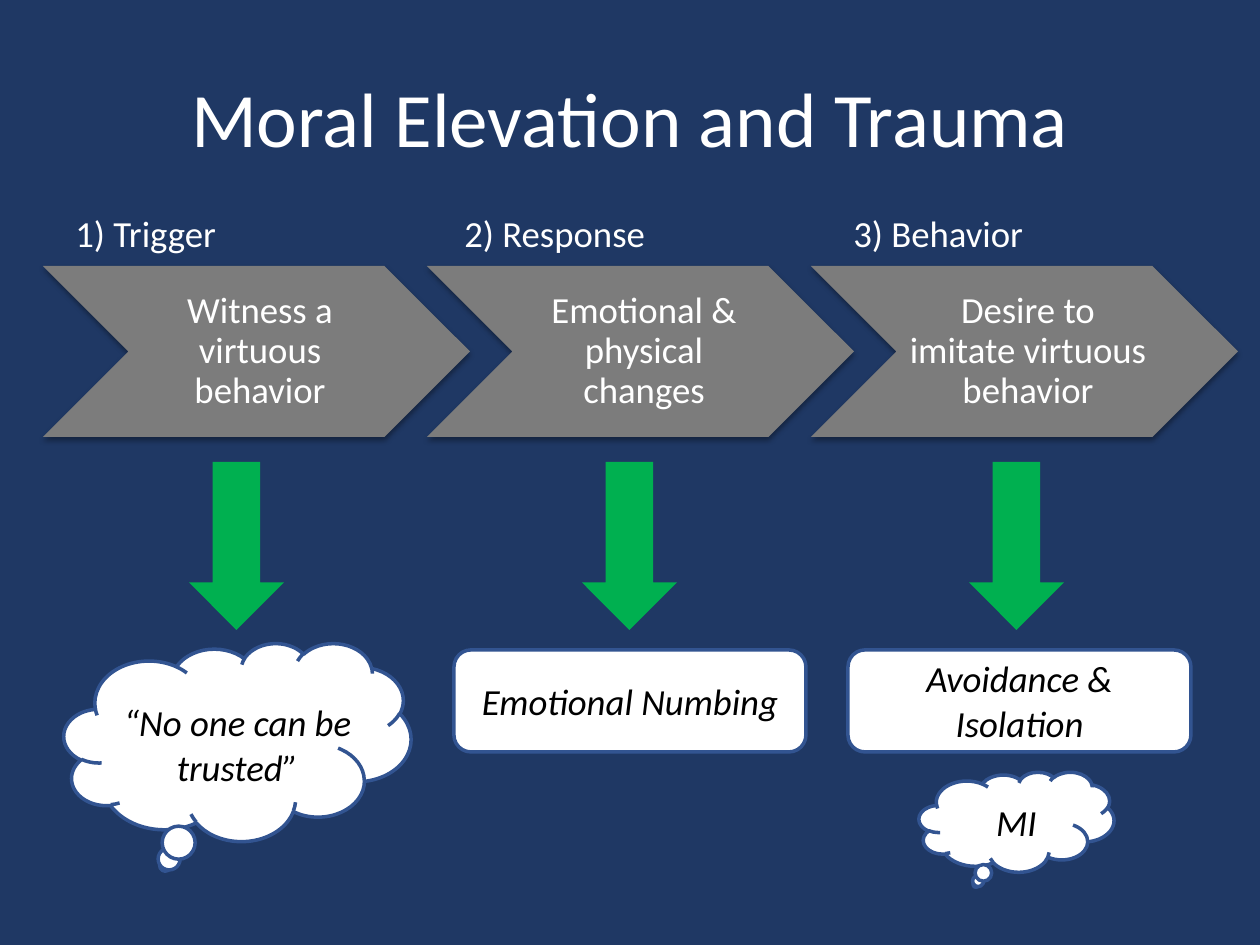
from lxml import etree
from pptx import Presentation
from pptx.dml.color import RGBColor
from pptx.enum.shapes import MSO_SHAPE
from pptx.enum.text import MSO_ANCHOR, PP_ALIGN
from pptx.oxml import parse_xml
from pptx.oxml.ns import nsdecls
from pptx.util import Emu, Pt

SLIDE_WIDTH, SLIDE_HEIGHT = 1260, 945
EMU_PER_PX = 914400 / 126
NAVY, WHITE, BLACK = "1F3864", "FFFFFF", "000000"
GRAY, GREEN, BLUE = "7C7C7C", "00B050", "325491"
FONT = "Calibri"
BODY_SIZE = 21


def px(length):
    return Emu(round(length * EMU_PER_PX))


def color(value):
    return RGBColor.from_string(value)


def add_run(paragraph, text, size, font_color, italic=False):
    run = paragraph.add_run()
    run.text = text
    run.font.name = FONT
    run.font.size = Pt(size)
    run.font.color.rgb = color(font_color)
    if italic:
        run.font.italic = True


def add_box_shape(slide, kind, box, fill, line=None):
    shape = slide.shapes.add_shape(kind, *map(px, box))
    shape.shadow.inherit = False
    shape.fill.solid()
    shape.fill.fore_color.rgb = color(fill)
    if line:
        shape.line.color.rgb = color(line)
        shape.line.width = Pt(2)
    else:
        shape.line.fill.background()
    return shape


def add_text(slide, box, text, font_color=WHITE, align=PP_ALIGN.CENTER, italic=False):
    frame = slide.shapes.add_textbox(*map(px, box)).text_frame
    frame.word_wrap = True
    paragraph = frame.paragraphs[0]
    paragraph.alignment = align
    add_run(paragraph, text, BODY_SIZE, font_color, italic)
    return frame


def add_soft_shadow(shape):
    properties = shape.fill._xPr
    effects = properties.find("{*}effectLst")
    effects.append(parse_xml(
        f'<a:outerShdw {nsdecls("a")} blurRad="{Pt(3.1)}" dist="{Pt(1.8)}" '
        'dir="5400000" rotWithShape="0"><a:srgbClr val="000000">'
        '<a:alpha val="35000"/></a:srgbClr></a:outerShdw>'))


def add_title(slide, box, text):
    title = slide.shapes.title
    title.left, title.top, title.width, title.height = map(px, box)
    frame = title.text_frame
    frame.vertical_anchor = MSO_ANCHOR.MIDDLE
    paragraph = frame.paragraphs[0]
    paragraph.alignment = PP_ALIGN.CENTER
    add_run(paragraph, text, 44, WHITE)


def add_step(slide, box, text):
    """Chevron with its description between notch and point."""
    left, top, width, height = box
    add_soft_shadow(add_box_shape(slide, MSO_SHAPE.CHEVRON, box, GRAY))
    notch = height // 2
    frame = add_text(slide, (left + notch, top, width - 2 * notch, height), text)
    frame.vertical_anchor = MSO_ANCHOR.MIDDLE
    frame.margin_left = px(11)
    frame.margin_top = frame.margin_right = frame.margin_bottom = px(4)
    frame.paragraphs[0].line_spacing = 0.9


def add_outcome(slide, kind, box, text, text_inset, text_top, text_height):
    left, top, width, height = box
    add_box_shape(slide, kind, box, WHITE, BLUE)
    text_box = (left + text_inset, top + text_top, width - 2 * text_inset, text_height)
    add_text(slide, text_box, text, BLACK, italic=True)


def main():
    presentation = Presentation()
    presentation.slide_width = px(SLIDE_WIDTH)
    presentation.slide_height = px(SLIDE_HEIGHT)
    slide = presentation.slides.add_slide(presentation.slide_layouts[5])
    slide.background.fill.solid()
    slide.background.fill.fore_color.rgb = color(NAVY)

    add_title(slide, (63, 38, 1134, 157), "Moral Elevation and Trauma")

    steps = [
        ("1) Trigger", "Witness a virtuous behavior", 189),
        ("2) Response", "Emotional & physical changes", 582),
        ("3) Behavior", "Desire to imitate virtuous behavior", 969),
    ]
    for index, (label, text, arrow_left) in enumerate(steps):
        add_step(slide, (43 + 384 * index, 266, 427, 171), text)
        add_text(slide, (63 + 389 * index, 205, 325, 57), label, align=PP_ALIGN.LEFT)
        add_box_shape(slide, MSO_SHAPE.DOWN_ARROW, (arrow_left, 462, 95, 168), GREEN)

    box_kind, cloud_kind = MSO_SHAPE.ROUNDED_RECTANGLE, MSO_SHAPE.CLOUD_CALLOUT
    outcomes = [
        (cloud_kind, (64, 643, 347, 198), "“No one can be trusted”", 0, 51, 102),
        (box_kind, (454, 650, 352, 102), "Emotional Numbing", 2, 23, 57),
        (box_kind, (848, 650, 343, 102), "Avoidance & Isolation", 25, 0, 102),
        (cloud_kind, (919, 772, 195, 100), "MI", 40, 22, 57),
    ]
    for outcome in outcomes:
        add_outcome(slide, *outcome)

    presentation.save("out.pptx")


if __name__ == "__main__":
    main()
